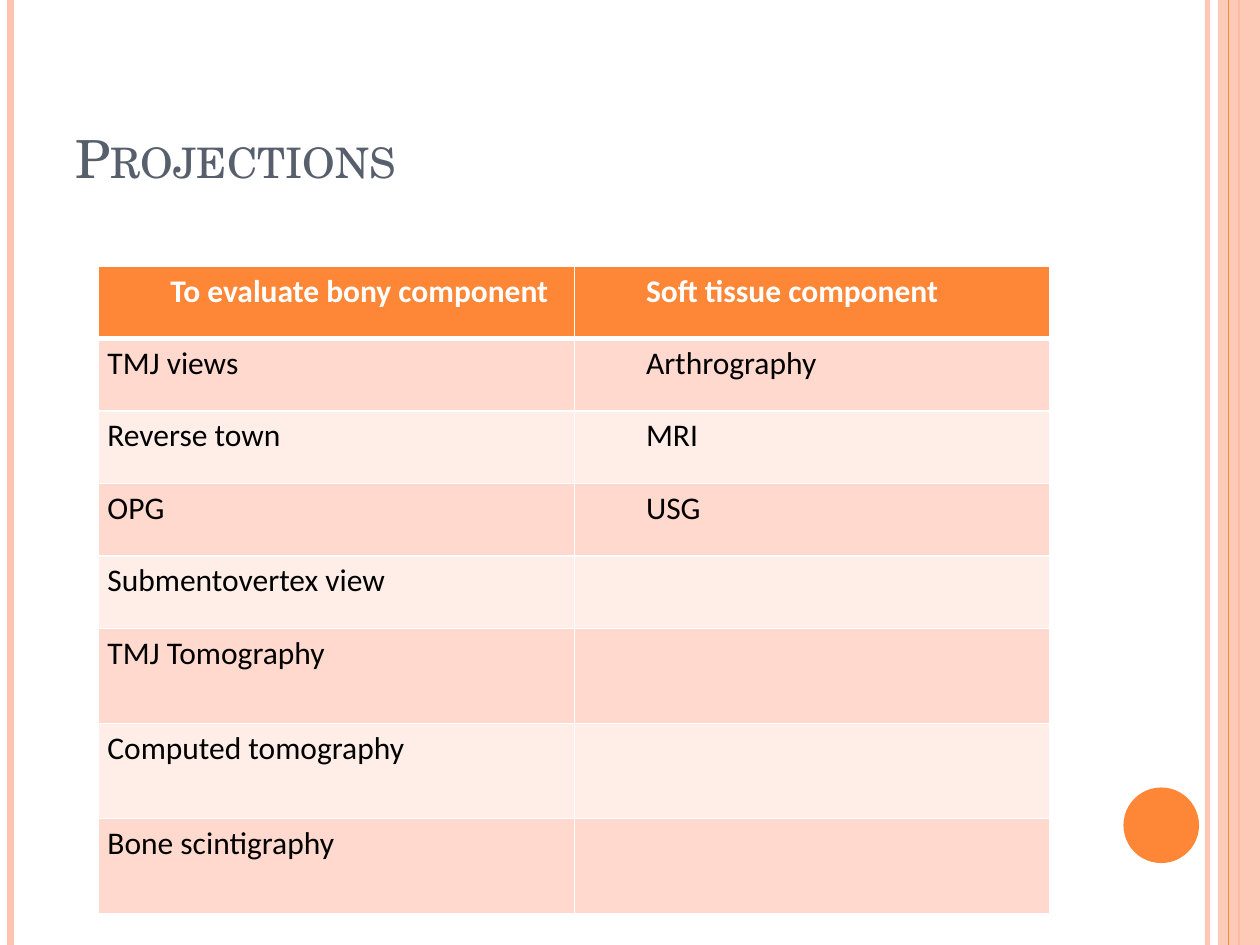
"""Build the slide listing imaging projections for bony and soft tissue components."""
from dataclasses import dataclass

import pptx
import pptx.dml.color
import pptx.enum.shapes
import pptx.enum.text
import pptx.oxml
import pptx.oxml.ns
import pptx.util

Pt = pptx.util.Pt
SLIDE_WIDTH, SLIDE_HEIGHT = 720, 540
ORANGE, PEACH, WHITE, BLACK, SLATE = "FE8637", "FEC3AE", "FFFFFF", "000000", "575F6D"
BAND_COLORS = ("FFEDE8", "FFD9CE")
HANGING = 27
COLUMN_INDENT = 36


@dataclass
class Stripe:
    x: float
    weight: float
    color: str
    opacity: int = 100


@dataclass
class Projection:
    bony: str
    soft: str = ""
    height: float = 41.4


LEFT_STRIPES = [Stripe(690, 3, PEACH, 93), Stripe(6, 4.5, PEACH), Stripe(708, 1.5, ORANGE)]
BAND_STRIPE = Stripe(702, 0.75, ORANGE)
PROJECTIONS = [
    Projection("To evaluate bony component", "Soft tissue component"),
    Projection("TMJ views", "Arthrography"),
    Projection("Reverse town", "MRI"),
    Projection("OPG", "USG"),
    Projection("Submentovertex view"),
    Projection("TMJ Tomography", height=54.3),
    Projection("Computed tomography", height=54.3),
    Projection("Bone scintigraphy", height=54.3),
]


def rgb(color: str) -> pptx.dml.color.RGBColor:
    return pptx.dml.color.RGBColor.from_string(color)


def set_opacity(shape, percent: int) -> None:
    for color in shape._element.xpath(".//a:srgbClr"):
        alpha = pptx.oxml.ns.qn("a:alpha")
        color.makeelement(alpha)
        color.append(color.makeelement(alpha, {"val": str(percent * 1000)}))


def draw_stripe(slide, stripe: Stripe) -> None:
    line = slide.shapes.add_connector(
        pptx.enum.shapes.MSO_CONNECTOR.STRAIGHT,
        Pt(stripe.x), Pt(0), Pt(stripe.x), Pt(SLIDE_HEIGHT))
    line.line.color.rgb = rgb(stripe.color)
    line.line.width = Pt(stripe.weight)
    properties = line._element.spPr
    properties.append(properties.makeelement(pptx.oxml.ns.qn("a:effectLst")))
    if stripe.opacity < 100:
        set_opacity(line, stripe.opacity)


def draw_shape(slide, kind, left: float, top: float, width: float, height: float, color: str):
    shape = slide.shapes.add_shape(kind, Pt(left), Pt(top), Pt(width), Pt(height))
    shape.shadow.inherit = False
    shape.fill.solid()
    shape.fill.fore_color.rgb = rgb(color)
    shape.line.fill.background()
    return shape


def set_borders(cell, top: float, bottom: float) -> None:
    properties = cell._tc.get_or_add_tcPr()
    for side, weight in (("L", 1), ("R", 1), ("T", top), ("B", bottom)):
        properties.append(pptx.oxml.parse_xml(
            f'<a:ln{side} {pptx.oxml.ns.nsdecls("a")} w="{Pt(weight)}">'
            f'<a:solidFill><a:srgbClr val="{WHITE}"/></a:solidFill></a:ln{side}>'))


def write_cell(cell, text: str, margin: float, indent: float, color: str, bold: bool) -> None:
    cell.margin_left = cell.margin_right = Pt(5)
    cell.margin_top = cell.margin_bottom = Pt(0)
    paragraph = cell.text_frame.paragraphs[0]
    paragraph.line_spacing = 1.15
    properties = paragraph._p.get_or_add_pPr()
    properties.set("marL", str(Pt(margin)))
    properties.set("indent", str(Pt(indent)))
    run = paragraph.add_run()
    run.text = text
    run.font.name = "Calibri"
    run.font.size = Pt(18)
    run.font.bold = bold
    run.font.color.rgb = rgb(color)


def draw_projections(slide) -> None:
    total = sum(projection.height for projection in PROJECTIONS)
    table = slide.shapes.add_table(
        len(PROJECTIONS), 2, Pt(56.4), Pt(152.2), Pt(543.6), Pt(total)).table
    for index, projection in enumerate(PROJECTIONS):
        table.rows[index].height = Pt(projection.height)
        heading = index == 0
        for column, text in enumerate((projection.bony, projection.soft)):
            cell = table.cell(index, column)
            set_borders(cell, 3 if index == 1 else 1, 3 if heading else 1)
            cell.fill.solid()
            cell.fill.fore_color.rgb = rgb(ORANGE if heading else BAND_COLORS[index % 2])
            hangs = column == 0 and not heading
            margin, indent = (HANGING, -HANGING) if hangs else (COLUMN_INDENT, 0)
            if text:
                write_cell(cell, text, margin, indent, WHITE if heading else BLACK, heading)


def write_title(slide) -> None:
    title = slide.shapes.title
    title.left, title.top, title.width, title.height = Pt(36), Pt(21.6), Pt(588), Pt(90)
    title.text_frame.vertical_anchor = pptx.enum.text.MSO_ANCHOR.BOTTOM
    paragraph = title.text_frame.paragraphs[0]
    paragraph.alignment = pptx.enum.text.PP_ALIGN.LEFT
    run = paragraph.add_run()
    run.text = "Projections"
    run.font.name = "TeX Gyre Schola"
    run.font.size = Pt(30)
    run.font.color.rgb = rgb(SLATE)
    run._r.get_or_add_rPr().set("cap", "small")


def main() -> None:
    presentation = pptx.Presentation()
    presentation.slide_width, presentation.slide_height = Pt(SLIDE_WIDTH), Pt(SLIDE_HEIGHT)
    slide = presentation.slides.add_slide(presentation.slide_layouts[5])
    shapes = pptx.enum.shapes.MSO_SHAPE
    for stripe in LEFT_STRIPES:
        draw_stripe(slide, stripe)
    side_band = draw_shape(slide, shapes.RECTANGLE, 696, 0, 24, SLIDE_HEIGHT, PEACH)
    set_opacity(side_band, 87)
    draw_stripe(slide, BAND_STRIPE)
    draw_shape(slide, shapes.OVAL, 642, 450, 43.2, 43.2, ORANGE)
    write_title(slide)
    draw_projections(slide)
    presentation.save("out.pptx")


if __name__ == "__main__":
    main()
